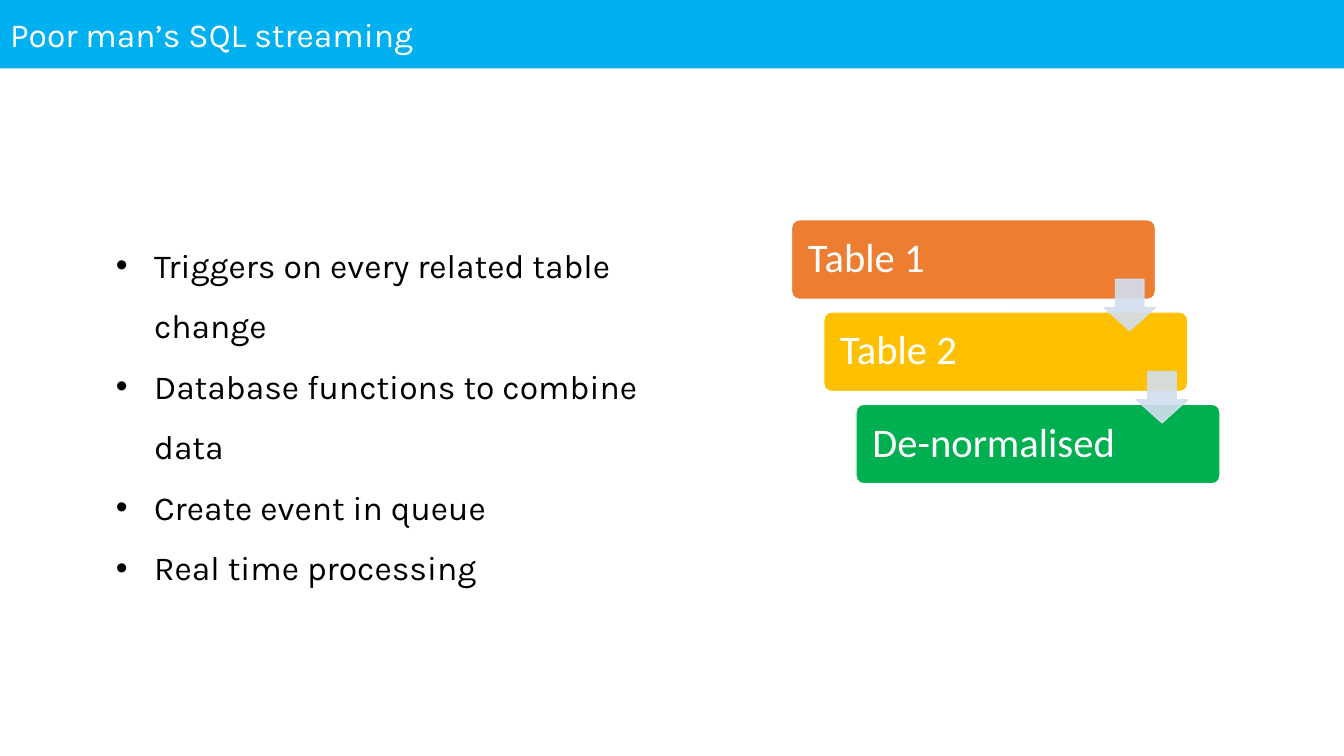
from lxml import etree
from pptx import Presentation, util as u
from pptx.dml.color import RGBColor
from pptx.enum import shapes, text
from pptx.oxml.ns import qn

WHITE = RGBColor(0xFF, 0xFF, 0xFF)
BLACK = RGBColor(0, 0, 0)
BLUE = RGBColor(0x00, 0xB0, 0xF0)
ORANGE = RGBColor(0xED, 0x7D, 0x31)
AMBER = RGBColor(0xFF, 0xC0, 0x00)
GREEN = RGBColor(0x00, 0xB0, 0x50)
PALE_BLUE = RGBColor(0xD2, 0xDE, 0xEF)


class SlideBuilder:
    body_font = "Karla"
    step_font = "Calibri"
    body_size = 24
    step_size = 29

    def __init__(self, deck):
        self.slide = deck.slides.add_slide(deck.slide_layouts[5])

    def style(self, paragraph, name, size, color):
        paragraph.font.name = name
        paragraph.font.size = u.Pt(size)
        paragraph.font.color.rgb = color

    def title(self, wording, width, height):
        banner = self.slide.shapes.title
        banner.left, banner.top = u.Inches(0), u.Inches(0)
        banner.width, banner.height = u.Inches(width), u.Inches(height)
        banner.fill.solid()
        banner.fill.fore_color.rgb = BLUE
        frame = banner.text_frame
        frame.text = wording
        frame.auto_size = text.MSO_AUTO_SIZE.NONE
        frame.vertical_anchor = text.MSO_ANCHOR.MIDDLE
        heading = frame.paragraphs[0]
        heading.alignment = text.PP_ALIGN.LEFT
        self.style(heading, self.body_font, self.body_size, WHITE)

    def bullets(self, points, *box):
        frame = self.slide.shapes.add_textbox(*map(u.Inches, box)).text_frame
        frame.word_wrap = True
        frame.auto_size = text.MSO_AUTO_SIZE.SHAPE_TO_FIT_TEXT
        frame.text = "\n".join(points)
        for point in frame.paragraphs:
            properties = point._p.get_or_add_pPr()
            properties.set("marL", str(u.Inches(0.38)))
            properties.set("indent", str(-u.Inches(0.38)))
            etree.SubElement(properties, qn("a:buFont")).set("typeface", "Arial")
            etree.SubElement(properties, qn("a:buChar")).set("char", "•")
            point.line_spacing = 1.5
            self.style(point, self.body_font, self.body_size, BLACK)

    def shape(self, kind, box, adjustments, fill, line):
        item = self.slide.shapes.add_shape(kind, *map(u.Inches, box))
        for index, value in enumerate(adjustments):
            item.adjustments[index] = value
        item.shadow.inherit = False
        item.fill.solid()
        item.fill.fore_color.rgb = fill
        item.line.color.rgb = line
        item.line.width = u.Pt(1)
        return item

    def step(self, label, color, *box):
        card = self.shape(shapes.MSO_SHAPE.ROUNDED_RECTANGLE, box, [0.1], color, WHITE)
        frame = card.text_frame
        frame.text = label
        frame.margin_left = frame.margin_right = u.Inches(0.14)
        frame.vertical_anchor = text.MSO_ANCHOR.MIDDLE
        caption = frame.paragraphs[0]
        caption.alignment = text.PP_ALIGN.LEFT
        caption.line_spacing = 0.9
        self.style(caption, self.step_font, self.step_size, WHITE)

    def arrow(self, *box):
        pointer = self.shape(
            shapes.MSO_SHAPE.DOWN_ARROW, box, [0.55, 0.45], PALE_BLUE, PALE_BLUE
        )
        for color in pointer._element.spPr.iter(qn("a:srgbClr")):
            etree.SubElement(color, qn("a:alpha")).set("val", "90000")


def main():
    deck = Presentation()
    deck.slide_width, deck.slide_height = u.Inches(13.33), u.Inches(7.5)
    builder = SlideBuilder(deck)
    builder.title("Poor man’s SQL streaming", 13.33, 0.68)
    builder.bullets(
        [
            "Triggers on every related table change",
            "Database functions to combine data",
            "Create event in queue",
            "Real time processing",
        ],
        1.05, 2.18, 5.99, 2.52,
    )
    steps = [("Table 1", ORANGE), ("Table 2", AMBER), ("De-normalised", GREEN)]
    step_right, step_down = 0.32, 0.915
    for index, (label, color) in enumerate(steps):
        builder.step(
            label, color, 7.85 + index * step_right, 2.18 + index * step_down, 3.61, 0.79
        )
    for index in range(len(steps) - 1):
        builder.arrow(10.95 + index * step_right, 2.77 + index * step_down, 0.51, 0.51)
    deck.save("out.pptx")


if __name__ == "__main__":
    main()
